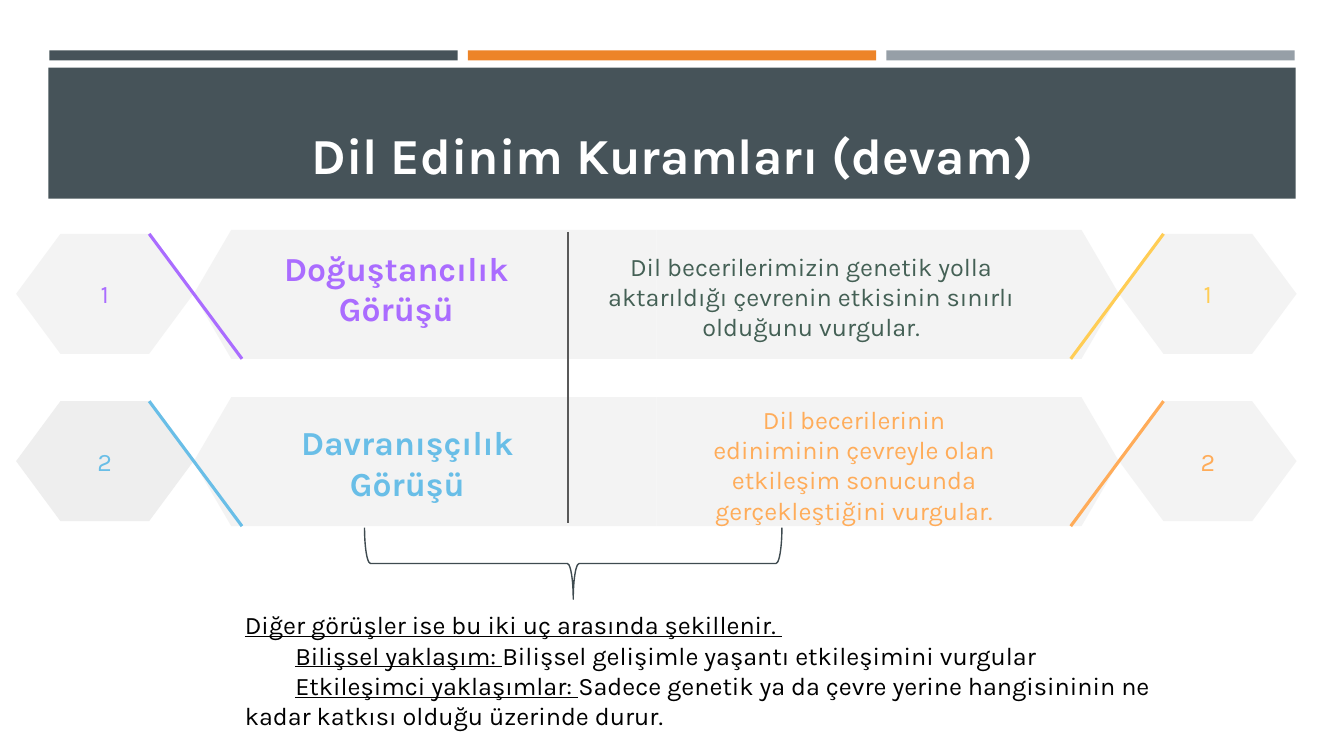
from pptx import Presentation
from pptx.dml.color import RGBColor
from pptx.enum.shapes import MSO_CONNECTOR, MSO_SHAPE
from pptx.enum.text import MSO_ANCHOR, PP_ALIGN
from pptx.oxml import parse_xml
from pptx.oxml.ns import nsdecls
from pptx.util import Inches, Pt

COLORS = {
    "slate": "465359", "orange": "ED8428", "gray": "969FA7",
    "white": "FFFFFF", "black": "000000", "panel": "F3F3F3",
    "panel_dark": "EEEEEE", "purple": "AA6CFF", "yellow": "FFCD55",
    "blue": "69BEE7", "apricot": "FFAC59", "green": "446055",
    "divider": "595959", "brace": "3F4B50",
}


def rgb(name):
    return RGBColor.from_string(COLORS[name])


def set_all(target, values):
    for name, value in values.items():
        setattr(target, name, value)


class SlideBuilder:
    font = "Karla"

    def __init__(self, page):
        self.page = page

    def paint(self, shape, fill=None, line=None, width=1):
        shape.shadow.inherit = False
        if fill:
            shape.fill.solid()
            shape.fill.fore_color.rgb = rgb(fill)
        else:
            shape.fill.background()
        if line:
            shape.line.color.rgb = rgb(line)
            shape.line.width = Pt(width)
        else:
            shape.line.fill.background()
        return shape

    def shape(self, kind, left, top, width, height, **colors):
        box = self.page.shapes.add_shape(
            kind, Inches(left), Inches(top), Inches(width), Inches(height))
        return self.paint(box, **colors)

    def hexagon(self, left, top, number, fill, color):
        width, height, slope = 1.76, 1.19, 0.44
        middle = top + height / 2
        right, bottom = left + width, top + height
        corners = [(right - slope, top), (right, middle), (right - slope, bottom),
                   (left + slope, bottom), (left, middle), (left + slope, top)]
        points = [(Inches(x), Inches(y)) for x, y in corners]
        outline = self.page.shapes.build_freeform(*points[0])
        outline.add_line_segments(points[1:], close=True)
        box = self.paint(outline.convert_to_shape(), fill)
        self.fill_text(box, [[(number, False)]], 18, color)

    def arrow_panel(self, left, top, flip):
        panel = self.shape(MSO_SHAPE.PENTAGON, left, top, 4.59, 1.28, fill="panel")
        panel.adjustments[0] = 0.292
        if flip:
            panel._element.spPr.get_or_add_xfrm().set("flipH", "1")

    def line(self, start, end, color, width):
        line = self.page.shapes.add_connector(
            MSO_CONNECTOR.STRAIGHT, *map(Inches, start + end))
        line.line.color.rgb = rgb(color)
        line.line.width = Pt(width)
        line._element.spPr.append(parse_xml(f"<a:effectLst {nsdecls('a')}/>"))

    def text(self, left, top, width, height, paragraphs, size, color, **options):
        box = self.page.shapes.add_textbox(
            Inches(left), Inches(top), Inches(width), Inches(height))
        self.fill_text(box, paragraphs, size, color, **options)

    def fill_text(self, box, paragraphs, size, color, bold=False,
                  align=PP_ALIGN.CENTER, anchor=MSO_ANCHOR.MIDDLE, indent=0):
        """Each paragraph is a list of (text, underlined); indent skips the first."""
        frame = box.text_frame
        set_all(frame, {
            "word_wrap": True, "vertical_anchor": anchor,
            "margin_left": Inches(0.1), "margin_right": Inches(0.1),
            "margin_top": Inches(0.05), "margin_bottom": Inches(0.05)})
        for index, spans in enumerate(paragraphs):
            para = frame.add_paragraph() if index else frame.paragraphs[0]
            para.alignment = align
            if index and indent:
                para._p.get_or_add_pPr().set("indent", str(Inches(indent)))
            for words, underline in spans:
                span = para.add_run()
                span.text = words
                set_all(span.font, {"name": self.font, "size": Pt(size),
                                    "bold": bold, "underline": underline})
                span.font.color.rgb = rgb(color)


def main():
    deck = Presentation()
    set_all(deck, {"slide_width": Inches(13.33), "slide_height": Inches(7.5)})
    slide = SlideBuilder(deck.slides.add_slide(deck.slide_layouts[6]))

    for index, color in enumerate(("slate", "orange", "gray")):
        slide.shape(MSO_SHAPE.RECTANGLE, 0.49 + 4.15 * index, 0.5, 4.05, 0.1, fill=color)
    slide.shape(MSO_SHAPE.RECTANGLE, 0.48, 0.67, 12.37, 1.3, fill="slate")
    slide.text(0.64, 0.77, 12.06, 1.11, [[("Dil Edinim Kuramları (devam)", False)]],
               36, "white", bold=True, anchor=MSO_ANCHOR.BOTTOM)

    # number, hexagon fill, left colour, right colour, heading box, description box
    rows = [
        ("1", "panel", "purple", "yellow",
         ("Doğuştancılık Görüşü", 2.29, 2.36, 3.28, "purple"),
         ("Dil becerilerimizin genetik yolla aktarıldığı çevrenin etkisinin "
          "sınırlı olduğunu vurgular.", 5.86, 2.44, 4.37, "green")),
        ("2", "panel_dark", "blue", "apricot",
         ("Davranışçılık Görüşü", 2.4, 4.09, 3.28, "blue"),
         ("Dil becerilerinin ediniminin çevreyle olan etkileşim sonucunda "
          "gerçekleştiğini vurgular.", 6.83, 4.11, 3.28, "apricot")),
    ]
    for index, (number, fill, left_color, right_color, heading, detail) in enumerate(rows):
        top = 2.28 + 1.66 * index
        edge_top, edge_bottom = top + 0.04, top + 1.28
        slide.hexagon(0.16, edge_top, number, fill, left_color)
        slide.arrow_panel(1.92, top, flip=True)
        slide.line((1.48, edge_top), (2.4, edge_bottom), left_color, 2.25)
        slide.hexagon(11.1, edge_top, number, "panel", right_color)
        slide.arrow_panel(6.51, top, flip=False)
        slide.line((11.54, edge_top), (10.62, edge_bottom), right_color, 2.25)
        for (words, left, box_top, width, color), size in ((heading, 24), (detail, 18)):
            slide.text(left, box_top, width, 1, [[(words, False)]], size, color,
                       bold=size == 24)

    slide.line((5.63, 2.3), (5.63, 5.19), "divider", 1.5)
    brace = slide.shape(MSO_SHAPE.RIGHT_BRACE, 5.33, 3.52, 0.71, 4.14, line="brace")
    brace.rotation = 90

    slide.text(2.33, 6, 9.32, 1.31, [
        [("Diğer görüşler ise bu iki uç arasında şekillenir. ", True)],
        [("Bilişsel yaklaşım: ", True),
         ("Bilişsel gelişimle yaşantı etkileşimini vurgular", False)],
        [("Etkileşimci yaklaşımlar: ", True),
         ("Sadece genetik ya da çevre yerine hangisininin ne kadar katkısı "
          "olduğu üzerinde durur.", False)],
    ], 18, "black", align=PP_ALIGN.LEFT, anchor=MSO_ANCHOR.TOP, indent=0.5)

    deck.save("out.pptx")


if __name__ == "__main__":
    main()
